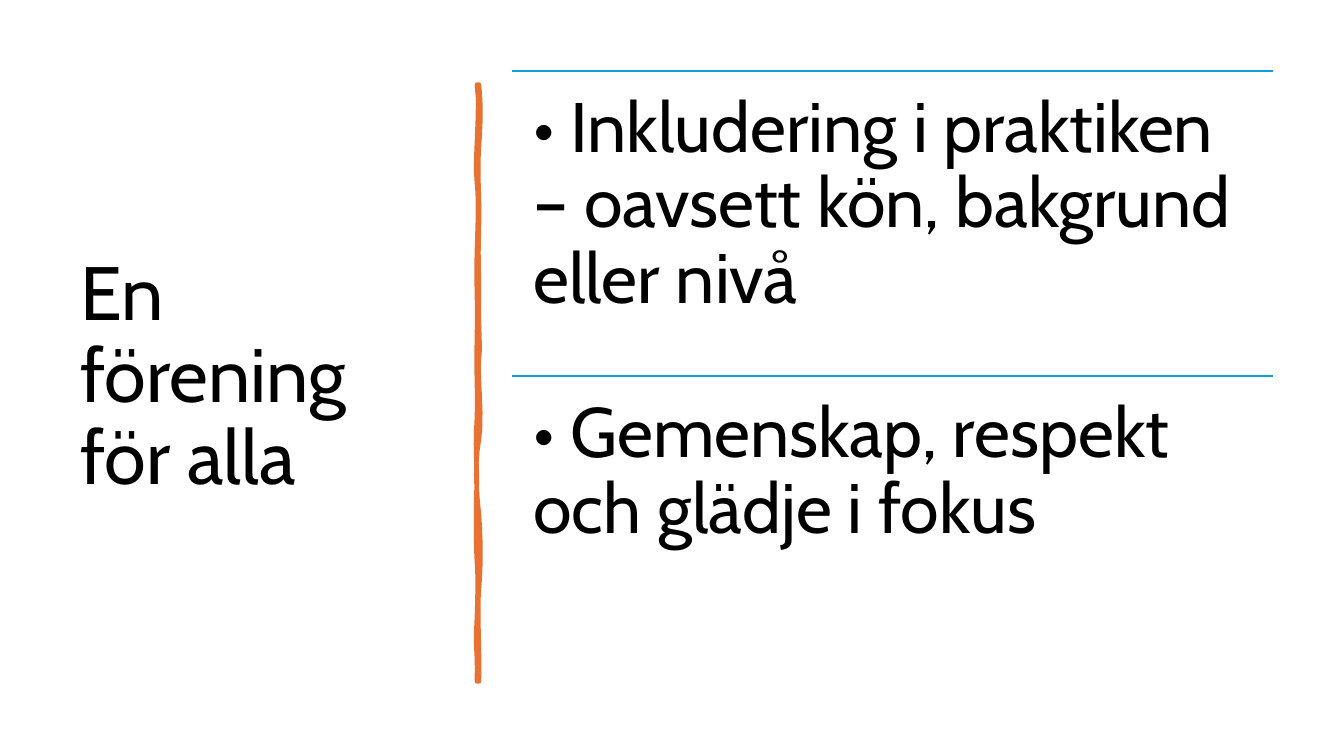
from lxml import etree
from pptx import Presentation
from pptx import util as u
from pptx.dml.color import RGBColor
from pptx.enum import shapes, text
from pptx.oxml.ns import qn

COLORS = {"background": "FFFFFF", "ink": "000000", "rule": "0F9ED5", "stroke": "E97132"}
FONT = "Cabin"
TITLE = "En förening för alla"
POINTS = [
    "• Inkludering i praktiken – oavsett kön, bakgrund eller nivå",
    "• Gemenskap, respekt och glädje i fokus",
]
STROKE_START = (0.05, 0)
STROKE_CURVES = [
    ((0.07, 0.18), (0.07, 0.35), (0.05, 0.62)),
    ((0.03, 0.89), (0.06, 1.11), (0.05, 1.42)),
    ((0.04, 1.73), (0.05, 1.78), (0.05, 2.10)),
    ((0.04, 2.41), (0.07, 2.58), (0.05, 2.72)),
    ((0.03, 2.86), (0.09, 3.30), (0.05, 3.52)),
    ((0.01, 3.73), (0.02, 4.00), (0.05, 4.26)),
    ((0.07, 4.52), (0.07, 4.80), (0.05, 5.00)),
    ((0.03, 5.19), (0.06, 5.66), (0.05, 5.92)),
    ((0.04, 5.92), (0.03, 5.92), (0.03, 5.92)),
    ((0.04, 5.62), (0.01, 5.60), (0.03, 5.29)),
    ((0.04, 4.99), (0.04, 4.86), (0.03, 4.73)),
    ((0.02, 4.60), (0.02, 4.11), (0.03, 3.93)),
    ((0.03, 3.75), (0.01, 3.61), (0.03, 3.31)),
    ((0.04, 3.02), (0.02, 2.89), (0.03, 2.51)),
    ((0.04, 2.14), (0.02, 1.97), (0.03, 1.66)),
    ((0.04, 1.34), (0.05, 1.16), (0.03, 0.97)),
    ((0.00, 0.79), (0.07, 0.20), (0.03, 0.00)),
]


def color(name):
    return RGBColor.from_string(COLORS[name])


def add_text(slide, box, wording, size, anchor, margins):
    shape = slide.shapes.add_textbox(*map(u.Inches, box))
    frame = shape.text_frame
    frame.word_wrap = True
    frame.vertical_anchor = anchor
    frame.margin_left = frame.margin_right = u.Inches(margins[0])
    frame.margin_top = frame.margin_bottom = u.Inches(margins[1])
    frame.text = wording
    paragraph = frame.paragraphs[0]
    paragraph.line_spacing = 0.9
    font = paragraph.runs[0].font
    font.name = FONT
    font.size = u.Pt(size)
    font.color.rgb = color("ink")


def add_title(slide, box):
    add_text(slide, box, TITLE, 54, text.MSO_ANCHOR.MIDDLE, (0.1, 0.05))


def sample_curves(start, curves, steps=6):
    for first, second, end in curves:
        for step in range(1, steps + 1):
            t = step / steps
            yield tuple(
                (1 - t) ** 3 * a + 3 * (1 - t) ** 2 * t * b + 3 * (1 - t) * t ** 2 * c + t ** 3 * d
                for a, b, c, d in zip(start, first, second, end)
            )
        start = end


def add_brush_stroke(slide, left, top):
    points = [
        (u.Inches(left + x), u.Inches(top + y))
        for x, y in [STROKE_START, *sample_curves(STROKE_START, STROKE_CURVES)]
    ]
    builder = slide.shapes.build_freeform(*points[0])
    builder.add_line_segments(points[1:], close=True)
    shape = builder.convert_to_shape()
    shape.shadow.inherit = False
    shape.fill.solid()
    shape.fill.fore_color.rgb = color("stroke")
    shape.line.color.rgb = color("stroke")
    shape.line.width = u.Pt(3.25)
    etree.SubElement(shape.line._get_or_add_ln(), qn("a:round"))


def add_points(slide, box):
    left, top, width, height = box
    row_height = height / len(POINTS)
    for index, wording in enumerate(POINTS):
        row_top = top + index * row_height
        rule = slide.shapes.add_connector(
            shapes.MSO_CONNECTOR.STRAIGHT,
            u.Inches(left), u.Inches(row_top), u.Inches(left + width), u.Inches(row_top),
        )
        rule.line.color.rgb = color("rule")
        rule.line.width = u.Pt(1.5)
        etree.SubElement(rule._element.spPr, qn("a:effectLst"))
        row = (left, row_top, width, row_height)
        add_text(slide, row, wording, 50, text.MSO_ANCHOR.TOP, (0.21, 0.21))


def main():
    presentation = Presentation()
    presentation.slide_width = u.Inches(13.33)
    presentation.slide_height = u.Inches(7.5)
    slide = presentation.slides.add_slide(presentation.slide_layouts[6])
    slide.background.fill.solid()
    slide.background.fill.fore_color.rgb = color("background")
    add_title(slide, (0.7, 0.7, 3.74, 6.1))
    add_brush_stroke(slide, 4.7, 0.84)
    add_points(slide, (5.08, 0.7, 7.55, 6.06))
    presentation.save("out.pptx")


if __name__ == "__main__":
    main()
